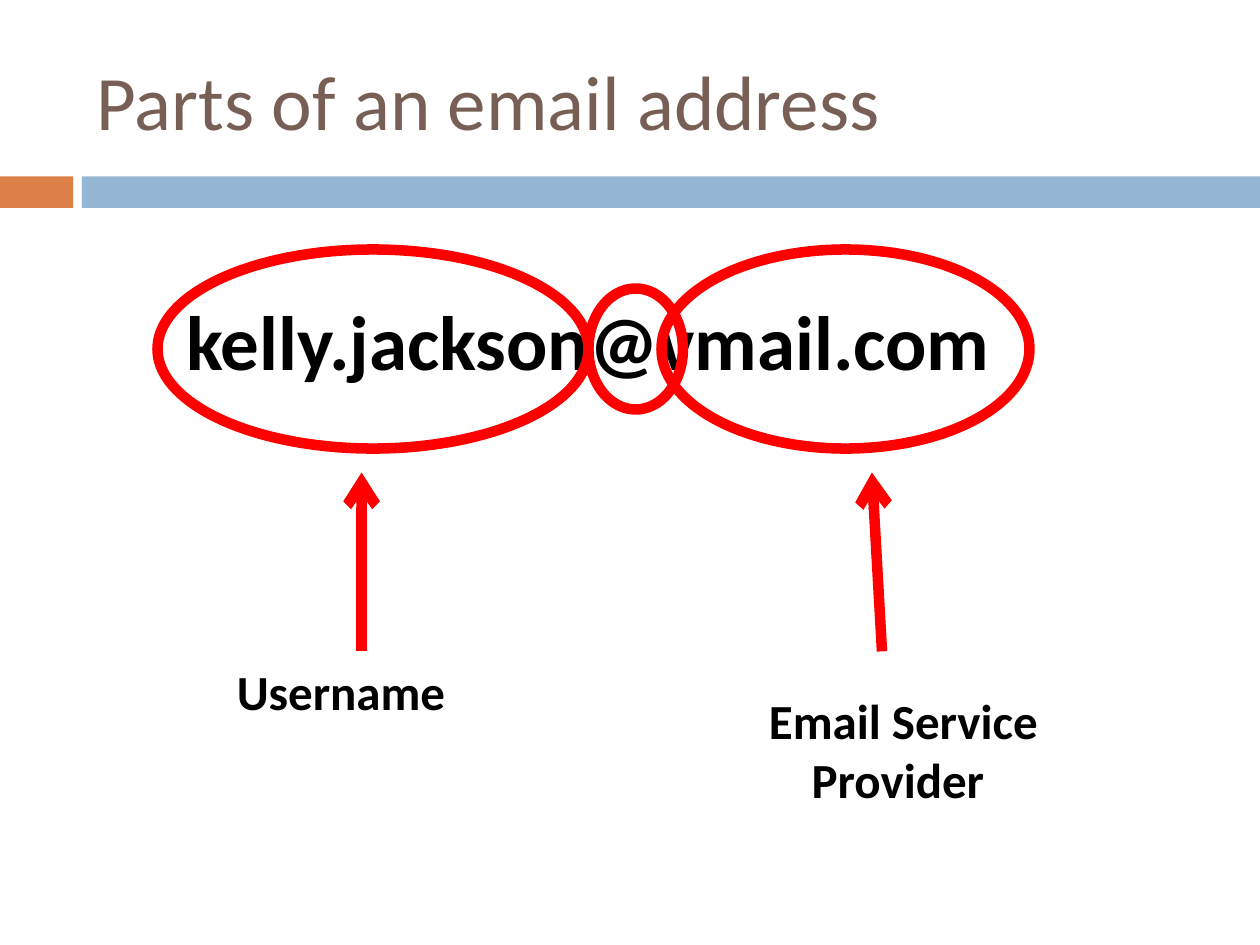
from lxml import etree
from pptx import Presentation
from pptx.dml.color import RGBColor
from pptx.enum import shapes, text
from pptx.oxml.ns import qn
from pptx.util import Inches, Pt

ORANGE = RGBColor(0xDD, 0x80, 0x47)
BLUE = RGBColor(0x94, 0xB6, 0xD2)
BROWN = RGBColor(0x77, 0x5F, 0x55)
BLACK = RGBColor(0, 0, 0)
RED = RGBColor(0xFF, 0, 0)
FONT = "Calibri"
MARK_WIDTH = Pt(6)


def add_text(slide, box, content, size, color=BLACK, bold=True,
             align=text.PP_ALIGN.CENTER, anchor=text.MSO_ANCHOR.TOP):
    frame = slide.shapes.add_textbox(*map(Inches, box)).text_frame
    frame.word_wrap = True
    frame.vertical_anchor = anchor
    frame.text = content
    paragraph = frame.paragraphs[0]
    paragraph.alignment = align
    font = paragraph.runs[0].font
    font.name, font.size, font.bold = FONT, Pt(size), bold
    font.color.rgb = color
    return paragraph


def add_band(slide, left, top, width, height):
    """Draw a short orange block, a gap and a blue bar across the given box."""
    block, gap = 0.58, 0.07
    bar_left = left + block + gap
    bar_width = width - block - gap
    for x, part_width, color in ((left, block, ORANGE), (bar_left, bar_width, BLUE)):
        shape = slide.shapes.add_shape(
            shapes.MSO_SHAPE.RECTANGLE, *map(Inches, (x, top, part_width, height)))
        shape.shadow.inherit = False
        shape.fill.solid()
        shape.fill.fore_color.rgb = color
        shape.line.fill.background()


def add_ring(slide, center_y, left, width, height):
    box = (left, center_y - height / 2, width, height)
    shape = slide.shapes.add_shape(shapes.MSO_SHAPE.OVAL, *map(Inches, box))
    shape.shadow.inherit = False
    shape.fill.background()
    shape.line.color.rgb = RED
    shape.line.width = MARK_WIDTH


def add_arrow(slide, start, end):
    connector = slide.shapes.add_connector(
        shapes.MSO_CONNECTOR.STRAIGHT, *map(Inches, start + end))
    connector.line.color.rgb = RED
    connector.line.width = MARK_WIDTH
    line = connector.line._get_or_add_ln()
    etree.SubElement(line, qn("a:tailEnd"), type="arrow")
    etree.SubElement(connector._element.spPr, qn("a:effectLst"))


def add_address(slide, left, top, width, height):
    """Write the address and circle its user name, at sign and provider."""
    address = add_text(slide, (left, top, width, height), "kelly.jackson@vmail.com", 44)
    address.space_before = Pt(7)
    center_y = top + 0.49
    for offset, ring_width, ring_height in (
            (4.58, 2.92, 1.58), (4, 0.75, 0.96), (0.58, 3.42, 1.58)):
        add_ring(slide, center_y, left + offset, ring_width, ring_height)


def add_callout(slide, box, label, start_x, end_x):
    """Label one part of the address, with an arrow pointing up to it."""
    add_arrow(slide, (start_x, 5.17), (end_x, 3.75))
    add_text(slide, box, label, 28)


def main():
    presentation = Presentation()
    presentation.slide_width, presentation.slide_height = Inches(10), Inches(7.5)
    slide = presentation.slides.add_slide(presentation.slide_layouts[6])
    add_band(slide, 0, 1.4, 10, 0.25)
    add_text(slide, (0.67, 0.25, 8.92, 1.08), "Parts of an email address", 44, BROWN,
             False, text.PP_ALIGN.LEFT, text.MSO_ANCHOR.MIDDLE)
    add_address(slide, 0.67, 2.28, 8, 1)
    add_callout(slide, (5.67, 5.43, 3, 1.04), "Email Service Provider ", 7, 6.92)
    add_callout(slide, (1.25, 5.2, 3, 0.57), "Username ", 2.87, 2.87)
    presentation.save("out.pptx")


if __name__ == "__main__":
    main()
